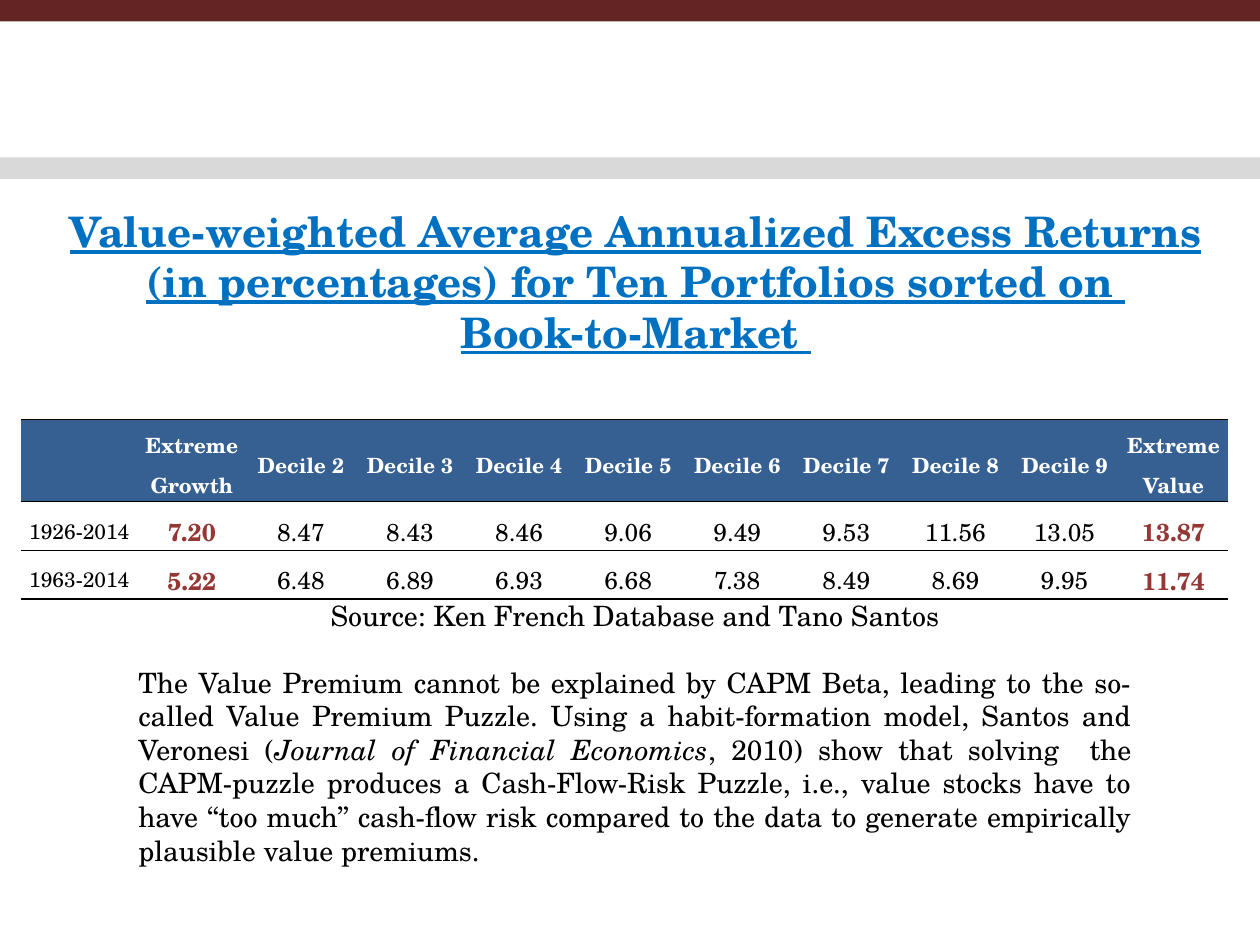
import pptx
import pptx.dml.color
import pptx.enum.shapes
import pptx.enum.text
import pptx.oxml
import pptx.oxml.ns
import pptx.util
from pptx.dml.color import RGBColor
from pptx.util import Inches

MAROON = RGBColor(0x63, 0x25, 0x23)
GREY = RGBColor(0xD9, 0xD9, 0xD9)
NAVY = RGBColor(0x37, 0x60, 0x92)
BLUE = RGBColor(0x00, 0x70, 0xC0)
RED = RGBColor(0x95, 0x37, 0x35)
BLACK = RGBColor(0, 0, 0)
WHITE = RGBColor(0xFF, 0xFF, 0xFF)

FONT = "TeX Gyre Schola"
NO_STYLE = "{2D5ABB26-0587-4C30-8999-92F81FD0307C}"
ALIGN = pptx.enum.text.PP_ALIGN
ANCHOR = pptx.enum.text.MSO_ANCHOR

TITLE_LINES = [
    "Value-weighted Average Annualized Excess Returns (in percentages) "
    "for Ten Portfolios sorted on ",
    "Book-to-Market ",
]
DECILES = ["Extreme Growth", *(f"Decile {n}" for n in range(2, 10)), "Extreme Value"]
RETURNS = {
    "1926-2014": [7.20, 8.47, 8.43, 8.46, 9.06, 9.49, 9.53, 11.56, 13.05, 13.87],
    "1963-2014": [5.22, 6.48, 6.89, 6.93, 6.68, 7.38, 8.49, 8.69, 9.95, 11.74],
}
SOURCE = "Source: Ken French Database and Tano Santos"
COMMENT = [
    ("The Value Premium cannot be explained by CAPM Beta, leading to the so-called "
     "Value Premium Puzzle. Using a habit-formation model, Santos and Veronesi (", False),
    ("Journal of Financial Economics", True),
    (", 2010) show that solving  the CAPM-puzzle produces a Cash-Flow-Risk Puzzle, "
     "i.e., value stocks have to have ‘‘too much’’ cash-flow risk compared to the data "
     "to generate empirically plausible value premiums.", False),
]


def add_run(paragraph, text, size, color, **formats):
    run = paragraph.add_run()
    run.text = text
    run.font.color.rgb = color
    values = {"name": FONT, "size": pptx.util.Pt(size), **formats}
    for name, value in values.items():
        setattr(run.font, name, value)


def add_band(slide, left, top, width, height, color):
    band = slide.shapes.add_shape(
        pptx.enum.shapes.MSO_SHAPE.RECTANGLE, left, top, width, height)
    band.shadow.inherit = False
    band.fill.solid()
    band.fill.fore_color.rgb = color
    band.line.fill.background()


def place_title(slide, left, top, width, height):
    title = slide.shapes.title
    box = {"left": left, "top": top, "width": width, "height": height}
    for name, value in box.items():
        setattr(title, name, value)
    frame = title.text_frame
    frame.word_wrap = True
    frame.auto_size = pptx.enum.text.MSO_AUTO_SIZE.NONE
    frame.vertical_anchor = ANCHOR.TOP
    for index, line in enumerate(TITLE_LINES):
        paragraph = frame.add_paragraph() if index else frame.paragraphs[0]
        paragraph.alignment = ALIGN.CENTER
        add_run(paragraph, line, 24, BLUE, bold=True, underline=True)


def add_rule(cell, side):
    """Draw a black rule on the top (T) or bottom (B) of a cell."""
    line = pptx.oxml.parse_xml(
        f'<a:ln{side} {pptx.oxml.ns.nsdecls("a")} w="12700"><a:solidFill>'
        f'<a:srgbClr val="{BLACK}"/></a:solidFill></a:ln{side}>')
    properties = cell._tc.get_or_add_tcPr()
    rules = properties.findall(pptx.oxml.ns.qn("a:lnT"))
    properties.insert(len(rules), line)


def fill_cell(cell, text, size, color, bold, background):
    cell.fill.solid()
    cell.fill.fore_color.rgb = background
    margins = {"margin_left": 0.01, "margin_right": 0.01,
               "margin_top": 0.01, "margin_bottom": 0}
    for name, value in margins.items():
        setattr(cell, name, Inches(value))
    cell.vertical_anchor = ANCHOR.MIDDLE
    if text:
        paragraph = cell.text_frame.paragraphs[0]
        paragraph.alignment = ALIGN.CENTER
        paragraph.line_spacing = 1.25
        add_run(paragraph, text, size, color, bold=bold)


def add_returns_table(slide, left, top, width, height):
    rows = [["", *DECILES]]
    rows += [[period, *(f"{value:.2f}" for value in values)]
             for period, values in RETURNS.items()]
    last_row, last_column = len(rows) - 1, len(DECILES)
    table = slide.shapes.add_table(
        len(rows), last_column + 1, left, top, width, height).table
    table.horz_banding = False
    table._tbl.tblPr.find(pptx.oxml.ns.qn("a:tableStyleId")).text = NO_STYLE

    # Wider period column, equal deciles; taller header, equal data rows
    period_width, header_height = Inches(0.92), Inches(0.53)
    for index, column in enumerate(table.columns):
        column.width = (width - period_width) // last_column if index else period_width
    for index, row in enumerate(table.rows):
        row.height = (height - header_height) // last_row if index else header_height

    for row, texts in enumerate(rows):
        for column, text in enumerate(texts):
            cell = table.cell(row, column)
            extreme = column in (1, last_column)
            if row == 0:
                fill_cell(cell, text, 12, WHITE, True, NAVY)
            else:
                fill_cell(cell, text, 14 if column else 12,
                          RED if extreme else BLACK, extreme, WHITE)
            if row < 2:
                add_rule(cell, "T")
            if row in (0, last_row):
                add_rule(cell, "B")


def add_commentary(slide, left, top, width, height):
    frame = slide.shapes.add_textbox(left, top, width, height).text_frame
    frame.word_wrap = True
    source = frame.paragraphs[0]
    source.alignment = ALIGN.CENTER
    add_run(source, SOURCE, 16, BLACK)
    comment = frame.add_paragraph()
    comment.alignment = ALIGN.JUSTIFY
    comment.space_before = pptx.util.Pt(19)
    for text, italic in COMMENT:
        add_run(comment, text, 16, BLACK, italic=italic)


def main():
    presentation = pptx.Presentation()
    presentation.slide_width = Inches(10)
    presentation.slide_height = Inches(7.5)
    slide = presentation.slides.add_slide(presentation.slide_layouts[5])

    # Header bands
    for top, color in ((0, MAROON), (1.25, GREY)):
        add_band(slide, 0, Inches(top), presentation.slide_width, Inches(0.17), color)
    # Content from top to bottom
    place_title(slide, Inches(0.42), Inches(1.58), Inches(9.25), Inches(1.72))
    add_returns_table(slide, Inches(0.17), Inches(3.33), Inches(9.58), Inches(1.17))
    add_commentary(slide, Inches(1), Inches(4.7), Inches(8.08), Inches(2.52))

    presentation.save("out.pptx")


if __name__ == "__main__":
    main()
